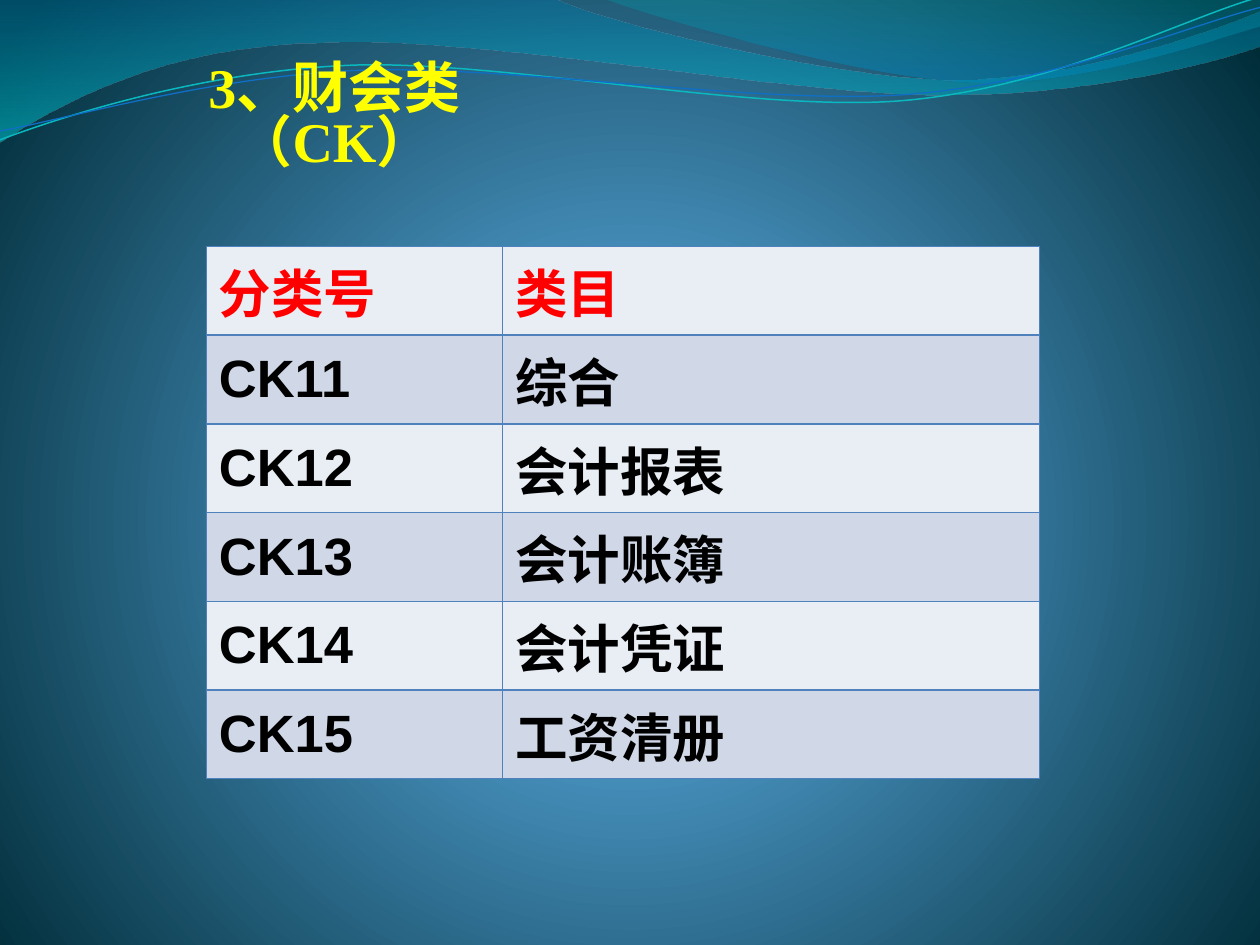
from dataclasses import dataclass

from lxml import etree
from pptx import Presentation
from pptx.dml.color import RGBColor
from pptx.enum.text import MSO_ANCHOR, MSO_AUTO_SIZE, PP_ALIGN
from pptx.oxml.ns import qn
from pptx.util import Cm, Pt

MIDDLE = MSO_ANCHOR.MIDDLE
GROW = MSO_AUTO_SIZE.SHAPE_TO_FIT_TEXT
CENTER = PP_ALIGN.CENTER


@dataclass(frozen=True)
class Theme:
    """Colours, fonts and sizes of the slide."""
    title: str = "FFFF00"
    header: str = "FF0000"
    body: str = "000000"
    bands: tuple = ("E9EDF4", "D0D8E8")
    border: str = "4F81BD"
    border_width: float = 1
    title_font: str = "Times New Roman"
    body_font: str = "Arial"
    title_size: int = 32
    body_size: int = 30
    backdrop: tuple = ((0, "4AA0D6", 100), (25, "4C98C7", 100), (100, "002C38", 100))
    broad_wave: tuple = ((0, "0074A1", 45), (100, "00C6CF", 55))
    narrow_wave: tuple = ((0, "00A1A9", 30), (80, "008BBF", 45))
    upper_line: str = "0AB8BF"
    lower_line: str = "0F6FC6"


THEME = Theme()
LINE_TILT = -2.7

BROAD_WAVE = (
    ((0, -0.03),),
    ((11.18, -0.03),),
    ((12.09, 0.43), (16.87, 1.6), (19.25, 1.6)),
    ((21.67, 1.6), (24.33, 0.66), (25.4, 0.23)),
    ((25.43, 0.91),),
    ((24.97, 1.12), (22.1, 1.93), (18.95, 1.91)),
    ((15.8, 1.91), (9.7, 0.71), (6.53, 0.86)),
    ((3.28, 0.89), (1.17, 2.11), (-0.03, 2.87)),
    ((0, -0.03),),
)
NARROW_WAVE = (
    ((12.17, -0.03),),
    ((12.93, 0.28), (17.32, 1.57), (19.53, 1.65)),
    ((21.74, 1.75), (24.41, 0.81), (25.4, 0.53)),
    ((25.4, 0),),
    ((12.17, -0.03),),
)
UPPER_LINE = (
    ((-0.05, 2.22),),
    ((1.19, 1.82), (4.02, 1.04), (7.05, 1.05)),
    ((10.05, 1.07), (15.02, 2.37), (18.08, 2.29)),
    ((21.13, 2.2), (23.87, 0.91), (25.41, 0.55)),
)
LOWER_LINE = (
    ((-0.04, 2.04),),
    ((1.16, 1.9), (4.18, 1.15), (7.2, 1.16)),
    ((10.25, 1.18), (15.13, 2.23), (18.18, 2.17)),
    ((21.18, 2.1), (23.93, 1.06), (25.45, 0.75)),
)

ROWS = (
    ("分类号", "类目"),
    ("CK11", "综合"),
    ("CK12", "会计报表"),
    ("CK13", "会计账簿"),
    ("CK14", "会计凭证"),
    ("CK15", "工资清册"),
)


def style_font(paragraph, name, size, color):
    """Set a bold font on a whole paragraph."""
    font = paragraph.font
    font.name, font.size, font.bold = name, Pt(size), True
    font.color.rgb = RGBColor.from_string(color)


def set_gradient(fill, properties, stops, circle=False):
    """Give a fill its gradient stops, running downwards or as a circle."""
    fill.gradient()
    gradient = etree.Element(qn("a:gradFill"), rotWithShape="1")
    stop_list = etree.SubElement(gradient, qn("a:gsLst"))
    for position, color, alpha in stops:
        stop = etree.SubElement(stop_list, qn("a:gs"), pos=str(position * 1000))
        tint = etree.SubElement(stop, qn("a:srgbClr"), val=color)
        if alpha < 100:
            etree.SubElement(tint, qn("a:alpha"), val=str(alpha * 1000))
    if circle:
        shade = etree.SubElement(gradient, qn("a:path"), path="circle")
        etree.SubElement(shade, qn("a:fillToRect"), l="10000", t="110000", r="10000", b="100000")
    else:
        etree.SubElement(gradient, qn("a:lin"), ang="5400000", scaled="1")
    properties.replace(properties.find(qn("a:gradFill")), gradient)


def add_curve(slide, left, top, segments, close):
    """Draw one outline of straight and cubic segments relative to a corner."""
    points = [(Cm(left + x), Cm(top + y)) for segment in segments for x, y in segment]
    builder = slide.shapes.build_freeform(*points[0])
    builder.add_line_segments(points[1:], close=close)
    shape = builder.convert_to_shape()
    shape.shadow.inherit = False
    steps = iter(list(shape.element.iter(qn("a:lnTo"))))
    for segment in segments[1:]:
        group = [next(steps) for _ in segment]
        if len(group) == 3:
            curve = etree.Element(qn("a:cubicBezTo"))
            group[0].addprevious(curve)
            for step in group:
                curve.append(step[0])
                step.getparent().remove(step)
    return shape


def add_waves(slide, left, top):
    """Draw the two translucent waves and the two thin lines."""
    for segments, stops in ((BROAD_WAVE, THEME.broad_wave), (NARROW_WAVE, THEME.narrow_wave)):
        wave = add_curve(slide, left, top, segments, True)
        set_gradient(wave.fill, wave.element.spPr, stops)
        wave.line.fill.background()
    for segments, color, width in (
        (UPPER_LINE, THEME.upper_line, 0.85),
        (LOWER_LINE, THEME.lower_line, 0.75),
    ):
        line = add_curve(slide, left, top, segments, False)
        line.rotation = LINE_TILT
        line.fill.background()
        line.line.color.rgb = RGBColor.from_string(color)
        line.line.width = Pt(width)


def add_borders(cell):
    """Put a thin line on each side of a cell."""
    properties = cell._tc.get_or_add_tcPr()
    for index, side in enumerate(("lnL", "lnR", "lnT", "lnB")):
        border = etree.Element(qn(f"a:{side}"), w=str(Pt(THEME.border_width)))
        solid = etree.SubElement(border, qn("a:solidFill"))
        etree.SubElement(solid, qn("a:srgbClr"), val=THEME.border)
        properties.insert(index, border)


def add_category_table(slide, left, top, width, height):
    """Place the table of class numbers and categories."""
    frame = slide.shapes.add_table(
        len(ROWS), len(ROWS[0]), Cm(left), Cm(top), Cm(width), Cm(height))
    table = frame.table
    table.first_row = table.horz_banding = False
    number_width = 5.97
    table.columns[0].width = Cm(number_width)
    table.columns[1].width = Cm(width - number_width)
    for row_index, texts in enumerate(ROWS):
        for column_index, text in enumerate(texts):
            cell = table.cell(row_index, column_index)
            cell.text = text
            cell.vertical_anchor = MIDDLE
            cell.fill.solid()
            cell.fill.fore_color.rgb = RGBColor.from_string(THEME.bands[row_index % 2])
            add_borders(cell)
            color = THEME.body if row_index else THEME.header
            style_font(cell.text_frame.paragraphs[0], THEME.body_font, THEME.body_size, color)


def add_title(slide, left, top, width, height):
    """Place the centred heading."""
    box = slide.shapes.add_textbox(Cm(left), Cm(top), Cm(width), Cm(height))
    frame = box.text_frame
    frame.word_wrap = True
    frame.auto_size = GROW
    paragraph = frame.paragraphs[0]
    paragraph.text = "3、财会类（CK）"
    paragraph.alignment = CENTER
    paragraph.line_spacing = 0.8
    style_font(paragraph, THEME.title_font, THEME.title_size, THEME.title)


def main():
    """Build and save the slide."""
    presentation = Presentation()
    presentation.slide_width, presentation.slide_height = Cm(25.4), Cm(19.05)
    slide = presentation.slides.add_slide(presentation.slide_layouts[6])
    backdrop = slide.background.fill
    backdrop.solid()
    properties = slide.element.find(".//" + qn("p:bgPr"))
    set_gradient(backdrop, properties, THEME.backdrop, circle=True)
    add_waves(slide, 0, 0)
    add_category_table(slide, 4.16, 4.97, 16.8, 10.0)
    add_title(slide, 1.98, 1.2, 9.53, 1.35)
    presentation.save("out.pptx")


if __name__ == "__main__":
    main()
